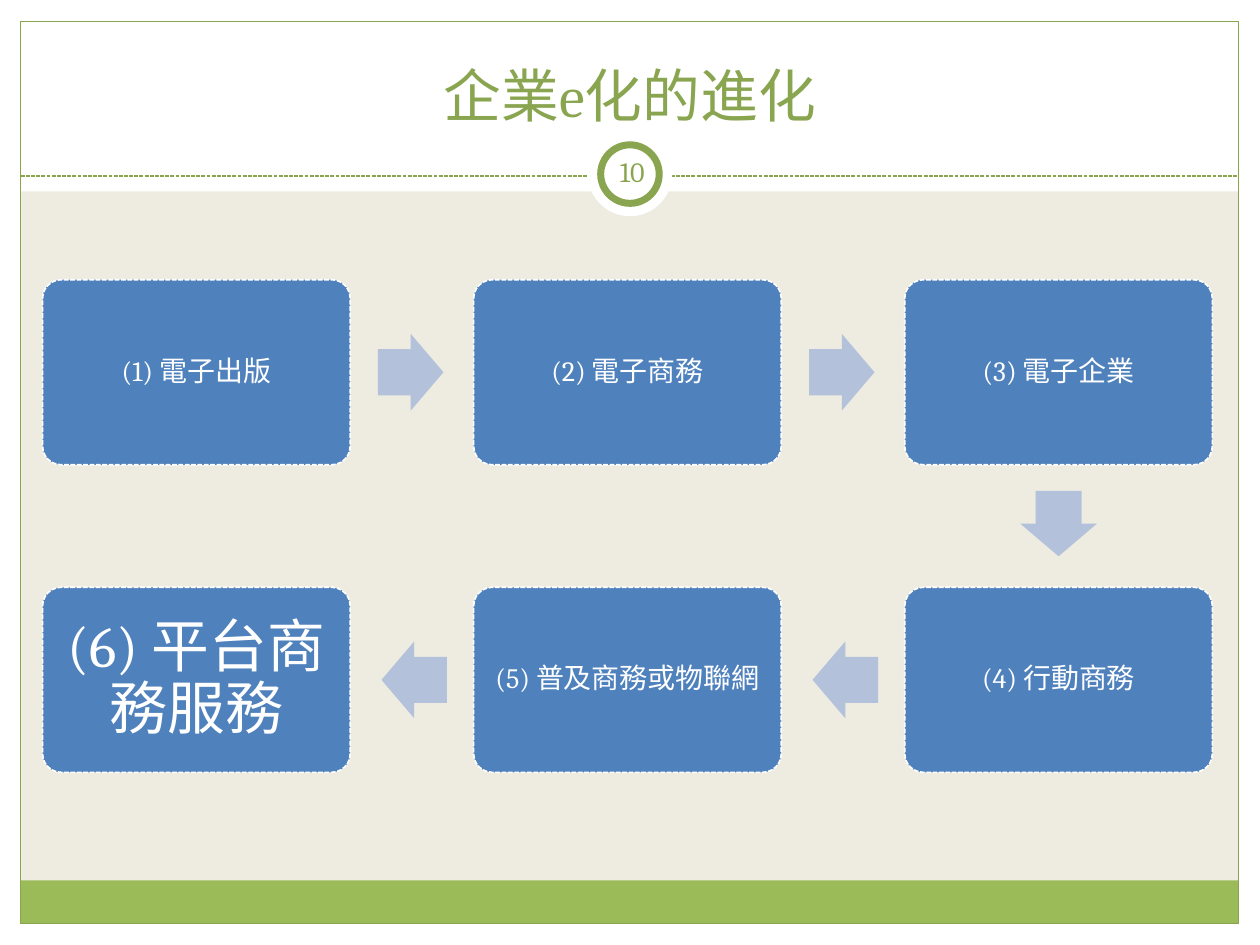
from pptx import Presentation
from pptx import util as u
from pptx.dml.color import RGBColor
from pptx.enum import dml, shapes, text
from pptx.oxml.ns import qn
from lxml import etree

COLORS = {
    "paper": "EEECE1",
    "white": "FFFFFF",
    "band": "9BBB59",
    "olive": "89A54F",
    "box": "4F81BD",
    "arrow": "B3C1DB",
}
KIND = shapes.MSO_SHAPE


class SlideBuilder:
    """Hold the deck style and the current slide, and draw each kind of element."""

    font = "Cambria"
    dash = dml.MSO_LINE.SQUARE_DOT

    def __init__(self, presentation):
        self.slide = presentation.slides.add_slide(presentation.slide_layouts[6])
        self.paint(self.slide.background.fill, "paper")

    def paint(self, fill, color):
        fill.solid()
        fill.fore_color.rgb = RGBColor.from_string(COLORS[color])

    def outline(self, line, color, width, dashed=False):
        self.paint(line.fill, color)
        line.width = u.Pt(width)
        if dashed:
            line.dash_style = self.dash

    def shape(self, kind, bounds, fill=None, line=None, width=0.75, dashed=False):
        shape = self.slide.shapes.add_shape(kind, *map(u.Cm, bounds))
        shape.shadow.inherit = False
        if fill:
            self.paint(shape.fill, fill)
        else:
            shape.fill.background()
        if line:
            self.outline(shape.line, line, width, dashed)
        else:
            shape.line.fill.background()
        return shape

    def rule(self, left, right, top):
        connector = self.slide.shapes.add_connector(
            shapes.MSO_CONNECTOR.STRAIGHT, u.Cm(left), u.Cm(top), u.Cm(right), u.Cm(top))
        self.outline(connector.line, "olive", 0.75, True)
        etree.SubElement(connector._element.spPr, qn("a:effectLst"))

    def add_words(self, shape, words, size, color, inset,
                  anchor=text.MSO_ANCHOR.MIDDLE, spacing=1.0):
        frame = shape.text_frame
        frame.word_wrap = True
        frame.vertical_anchor = anchor
        frame.margin_left = frame.margin_right = u.Cm(inset)
        frame.margin_top = frame.margin_bottom = u.Cm(inset)
        paragraph = frame.paragraphs[0]
        paragraph.alignment = text.PP_ALIGN.CENTER
        paragraph.line_spacing = spacing
        run = paragraph.add_run()
        run.text = words
        run.font.name = self.font
        run.font.size = u.Pt(size)
        run.font.color.rgb = RGBColor.from_string(COLORS[color])

    def label(self, bounds, words, size, inset, anchor=text.MSO_ANCHOR.MIDDLE):
        box = self.slide.shapes.add_textbox(*map(u.Cm, bounds))
        self.add_words(box, words, size, "olive", inset, anchor)

    def step(self, left, top, words, size, inset):
        box = self.shape(KIND.ROUNDED_RECTANGLE, (left, top, 6.2, 3.73),
                         "box", "white", 0.9, True)
        box.adjustments[0] = 0.1
        self.add_words(box, words, size, "white", inset, spacing=0.9)

    def arrow(self, left, top, rotation):
        arrow = self.shape(KIND.RIGHT_ARROW, (left, top, 1.32, 1.55), "arrow")
        arrow.adjustments[0] = 0.6
        arrow.adjustments[1] = 0.5
        arrow.rotation = rotation


def main():
    presentation = Presentation()
    presentation.slide_width, presentation.slide_height = u.Cm(25.4), u.Cm(19.05)
    builder = SlideBuilder(presentation)

    margins = [(0, 18.62, 25.4, 0.43), (0, 0, 25.4, 3.86),
               (0, 0, 0.43, 19.05), (24.97, 0, 0.43, 19.05)]
    for bounds in margins:
        builder.shape(KIND.RECTANGLE, bounds, "white")
    builder.shape(KIND.RECTANGLE, (0.42, 17.75, 24.55, 0.87), "band")
    builder.shape(KIND.RECTANGLE, (0.42, 0.43, 24.55, 18.19), line="olive")
    builder.rule(0.42, 24.97, 3.55)
    builder.shape(KIND.OVAL, (11.85, 2.66, 1.7, 1.7), "white")
    builder.shape(KIND.OVAL, (12.11, 2.92, 1.18, 1.18), "white", "olive", 4)
    builder.label((0.85, 0.64, 23.7, 2.1), "企業e化的進化", 33, 0.13, text.MSO_ANCHOR.BOTTOM)
    builder.label((12.11, 2.84, 1.27, 1.22), "10", 16, 0.13)

    first_left, first_top, column_pitch, row_pitch = 0.86, 5.64, 8.69, 6.2
    steps = [
        (0, 0, "(1) 電子出版"), (1, 0, "(2) 電子商務"), (2, 0, "(3) 電子企業"),
        (2, 1, "(4) 行動商務"), (1, 1, "(5) 普及商務或物聯網"), (0, 1, "(6) 平台商務服務"),
    ]
    for column, row, words in steps:
        left = first_left + column * column_pitch
        top = first_top + row * row_pitch
        is_last = words == steps[-1][2]
        builder.step(left, top, words, 33 if is_last else 16, 0.36 if is_last else 0.18)
        if column < 2:
            builder.arrow(left + (6.83 if row else 6.76), top + 1.09, 180 * row)
    builder.arrow(20.68, 9.78, 90)

    presentation.save("out.pptx")


if __name__ == "__main__":
    main()
